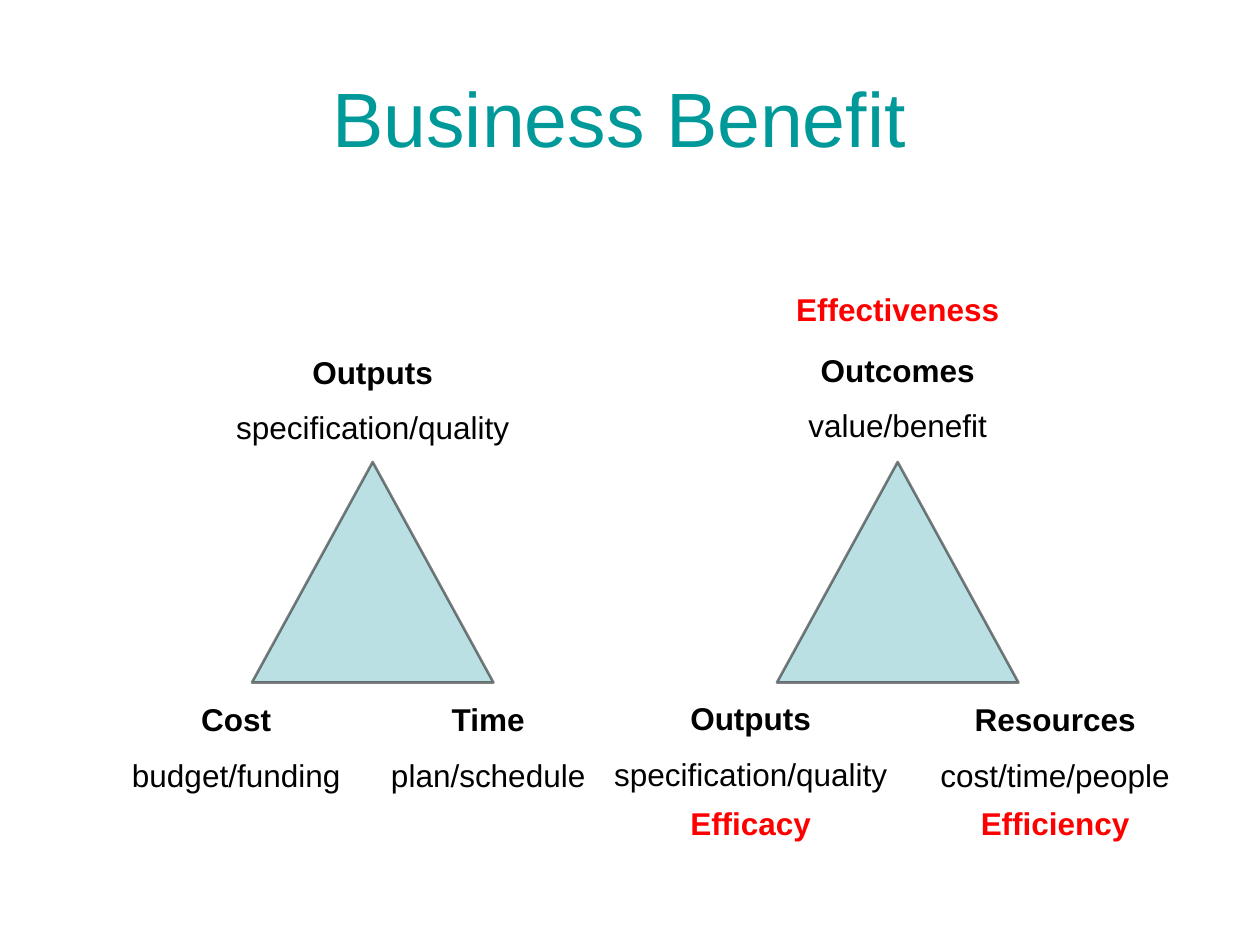
from lxml import etree
from pptx import Presentation
from pptx.dml.color import RGBColor
from pptx.enum.shapes import MSO_SHAPE
from pptx.enum.text import MSO_ANCHOR, MSO_AUTO_SIZE, PP_ALIGN
from pptx.oxml.ns import qn
from pptx.util import Inches, Pt

# Grid of 120 columns by 90 rows
CELL = Inches(10) // 120
LABEL_COLS, LABEL_ROWS, TAG_ROWS = 29, 10.2, 5
BLACK, RED, TEAL, PALE_BLUE = "000000", "FF0000", "009999", "BBE0E3"


def color(hex_value):
    return RGBColor.from_string(hex_value)


def grid(*cells):
    return [round(cell * CELL) for cell in cells]


def add_line(paragraph, wording, size, hex_value, bold=False):
    paragraph.alignment = PP_ALIGN.CENTER
    run = paragraph.add_run()
    run.text = wording
    run.font.name = "Arial"
    run.font.size = Pt(size)
    run.font.bold = bold
    run.font.color.rgb = color(hex_value)


def add_heading(slide, box, wording):
    heading = slide.shapes.title
    heading.left, heading.top, heading.width, heading.height = grid(*box)
    heading.text_frame.vertical_anchor = MSO_ANCHOR.MIDDLE
    add_line(heading.text_frame.paragraphs[0], wording, 44, TEAL)


def add_caption(slide, box, term, detail=None, hex_value=BLACK):
    """A bold term, with an optional plain detail below it."""
    frame = slide.shapes.add_textbox(*grid(*box)).text_frame
    frame.word_wrap = True
    frame.auto_size = MSO_AUTO_SIZE.SHAPE_TO_FIT_TEXT
    add_line(frame.paragraphs[0], term, 18, hex_value, bold=True)
    if detail:
        detail_line = frame.add_paragraph()
        detail_line.space_before = Pt(10)
        add_line(detail_line, detail, 18, hex_value)


def add_triangle(slide, box, corners, tags=()):
    """A triangle with captions placed in cells from its top left."""
    left, top, _, _ = box
    triangle = slide.shapes.add_shape(MSO_SHAPE.ISOSCELES_TRIANGLE, *grid(*box))
    triangle.shadow.inherit = False
    triangle.fill.solid()
    triangle.fill.fore_color.rgb = color(PALE_BLUE)
    triangle.line.width = Pt(1.5)
    triangle.line.color.rgb = color(BLACK)
    # Half-transparent outline
    outline_color = triangle.line._ln.find(".//" + qn("a:srgbClr"))
    etree.SubElement(outline_color, qn("a:alpha")).set("val", "50000")

    for col, row, term, detail in corners:
        add_caption(slide, (left + col, top + row, LABEL_COLS, LABEL_ROWS), term, detail)
    for col, row, term in tags:
        add_caption(slide, (left + col, top + row, LABEL_COLS, TAG_ROWS), term, hex_value=RED)


def main():
    deck = Presentation()
    deck.slide_width, deck.slide_height = grid(120, 90)
    slide = deck.slides.add_slide(deck.slide_layouts[5])
    add_heading(slide, (5, 3.6, 108, 15), "Business Benefit")

    # Project constraints
    add_triangle(slide, (24, 44, 23, 21), [
        (-3, -11, "Outputs", "specification/quality"),
        (-16, 22.1, "Cost", "budget/funding"),
        (8, 22.1, "Time", "plan/schedule"),
    ])

    # Business outcomes
    add_triangle(slide, (74, 44, 23, 21), [
        (-3, -11.2, "Outcomes", "value/benefit"),
        (-17, 22, "Outputs", "specification/quality"),
        (12, 22.1, "Resources", "cost/time/people"),
    ], [
        (-3, -17, "Effectiveness"),
        (-17, 32, "Efficacy"),
        (12, 32, "Efficiency"),
    ])
    deck.save("out.pptx")


if __name__ == "__main__":
    main()
